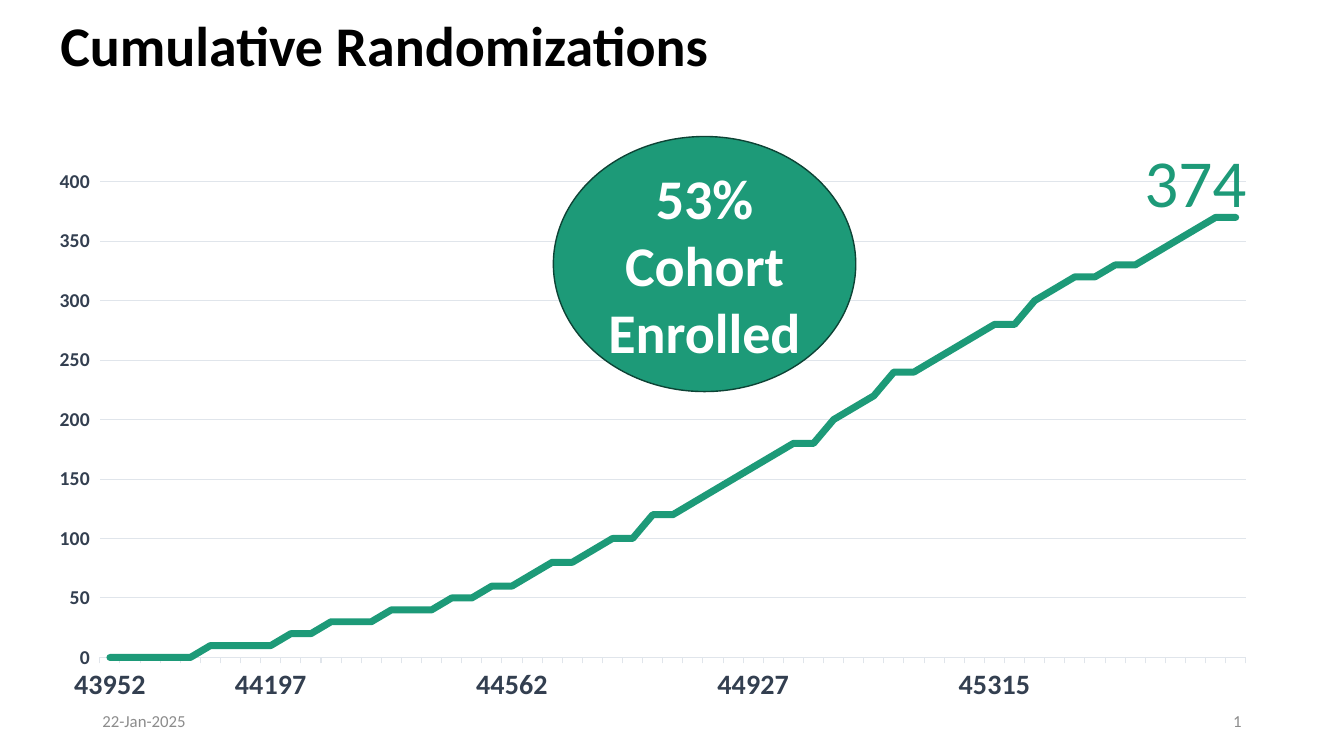
from dataclasses import dataclass

from lxml import etree
from pptx import Presentation
from pptx.chart.data import CategoryChartData
from pptx.dml.color import RGBColor
from pptx.enum.chart import XL_CHART_TYPE as ChartType
from pptx.enum.chart import XL_LABEL_POSITION as LabelPosition
from pptx.enum.chart import XL_TICK_MARK as TickMark
from pptx.enum.shapes import MSO_SHAPE as ShapeType
from pptx.enum.text import MSO_ANCHOR as Anchor
from pptx.enum.text import PP_ALIGN as Align
from pptx.oxml import parse_xml
from pptx.oxml.ns import nsdecls, qn
from pptx.slide import Slide
from pptx.text.text import Font, TextFrame
from pptx.util import Pt

FONT = "Calibri"
COLORS = {
    "green": "1D9A78",
    "dark green": "0D4335",
    "axis text": "333F50",
    "grid": "E0E5EB",
    "footer": "8C8C8C",
    "black": "000000",
    "white": "FFFFFF",
}

CUMULATIVE = [
    0, 0, 0, 0, 0, 10, 10, 10, 10, 20, 20, 30, 30, 30, 40, 40, 40, 50, 50,
    60, 60, 70, 80, 80, 90, 100, 100, 120, 120, 130, 140, 150, 160, 170, 180,
    180, 200, 210, 220, 240, 240, 250, 260, 270, 280, 280, 300, 310, 320,
    320, 330, 330, 340, 350, 360, 370, 370,
]
MONTH_LABELS = {0: "43952", 8: "44197", 20: "44562", 32: "44927", 44: "45315"}
TOTAL_POINT, TOTAL_TEXT = 54, "374"
PLOT_AREA = {"x": 0.062, "y": 0.105, "w": 0.891, "h": 0.686}


@dataclass
class Label:
    text: str
    left: float
    top: float
    width: float
    height: float
    size: float
    color: str
    bold: bool = False
    align: Align = Align.LEFT
    anchor: Anchor = Anchor.MIDDLE
    indent: float = 0


BADGE = Label("53% Cohort Enrolled", 395.3, 97.5, 216, 182.2, 40, "white",
              bold=True, align=Align.CENTER)
LABELS = [
    Label("Cumulative Randomizations", 0, 4.3, 960, 55.4, 40, "black",
          bold=True, anchor=Anchor.TOP, indent=36),
    Label("22-Jan-2025", 66, 500.5, 216, 28.75, 12, "footer"),
    Label("1", 678, 500.5, 216, 28.75, 12, "footer", align=Align.RIGHT),
]


def rgb(name: str) -> RGBColor:
    return RGBColor.from_string(COLORS[name])


def style_font(font: Font, size: float, color: str, bold: bool) -> None:
    font.name = FONT
    font.size = Pt(size)
    font.bold = bold
    font.color.rgb = rgb(color)


def fill_text(frame: TextFrame, label: Label) -> None:
    frame.word_wrap = True
    frame.vertical_anchor = label.anchor
    paragraph = frame.paragraphs[0]
    paragraph.text = label.text
    paragraph.alignment = label.align
    if label.indent:
        paragraph._p.get_or_add_pPr().set("marL", str(Pt(label.indent)))
    style_font(paragraph.font, label.size, label.color, label.bold)


def add_label(slide: Slide, label: Label) -> None:
    box = slide.shapes.add_textbox(
        Pt(label.left), Pt(label.top), Pt(label.width), Pt(label.height))
    fill_text(box.text_frame, label)


def add_badge(slide: Slide, label: Label) -> None:
    ellipse = slide.shapes.add_shape(
        ShapeType.OVAL,
        Pt(label.left), Pt(label.top), Pt(label.width), Pt(label.height))
    ellipse.shadow.inherit = False
    ellipse.fill.solid()
    ellipse.fill.fore_color.rgb = rgb("green")
    ellipse.line.color.rgb = rgb("dark green")
    ellipse.line.width = Pt(1)
    fill_text(ellipse.text_frame, label)


def add_enrollment_chart(slide: Slide) -> None:
    data = CategoryChartData()
    data.categories = [MONTH_LABELS.get(i, "") for i in range(len(CUMULATIVE))]
    data.add_series("Series 1", CUMULATIVE)
    chart = slide.shapes.add_chart(
        ChartType.LINE, Pt(14.4), Pt(77.8), Pt(918.7), Pt(495.4), data).chart
    chart.has_legend = False
    chart.has_title = False
    style_font(chart.font, 12, "axis text", True)

    months, counts = chart.category_axis, chart.value_axis
    for axis, size in ((months, 20), (counts, 14)):
        style_font(axis.tick_labels.font, size, "axis text", True)
        axis.major_tick_mark = TickMark.OUTSIDE
        axis.minor_tick_mark = TickMark.NONE
    counts.minimum_scale, counts.maximum_scale = 0, 400
    counts.major_unit = 50
    counts.format.line.fill.background()
    for line in (months.format.line, counts.major_gridlines.format.line):
        line.color.rgb = rgb("grid")
        line.width = Pt(0.75)

    # Automatic rotation keeps each month label on one line.
    months._element.find(qn("c:txPr")).find(qn("a:bodyPr")).set(
        "rot", "-60000000")
    skip = parse_xml(f'<c:tickLblSkip {nsdecls("c")} val="1"/>')
    months._element.find(qn("c:noMultiLvlLbl")).addprevious(skip)
    set_plot_area(chart._chartSpace.chart.plotArea)

    plot = chart.plots[0]
    plot.vary_by_categories = False
    series = plot.series[0]
    series.smooth = False
    series.format.line.color.rgb = rgb("green")
    series.format.line.width = Pt(5)
    series._element.find(qn("c:spPr")).find(qn("a:ln")).set("cap", "rnd")
    total = series.points[TOTAL_POINT].data_label
    total.position = LabelPosition.ABOVE
    run = total.text_frame.paragraphs[0].add_run()
    run.text = TOTAL_TEXT
    style_font(run.font, 48, "green", False)


def set_plot_area(plot_area: etree._Element) -> None:
    """Fix the inner plot area as fractions of the chart."""
    for layout in plot_area.findall(qn("c:layout")):
        plot_area.remove(layout)
    modes = '<c:xMode val="edge"/><c:yMode val="edge"/>'
    sizes = "".join(f'<c:{k} val="{v}"/>' for k, v in PLOT_AREA.items())
    plot_area.insert(0, parse_xml(
        f'<c:layout {nsdecls("c")}><c:manualLayout>'
        f'<c:layoutTarget val="inner"/>{modes}{sizes}'
        '</c:manualLayout></c:layout>'))


def main() -> None:
    presentation = Presentation()
    presentation.slide_width, presentation.slide_height = Pt(960), Pt(540)
    slide = presentation.slides.add_slide(presentation.slide_layouts[6])
    add_enrollment_chart(slide)
    add_badge(slide, BADGE)
    for label in LABELS:
        add_label(slide, label)
    presentation.save("out.pptx")


if __name__ == "__main__":
    main()
